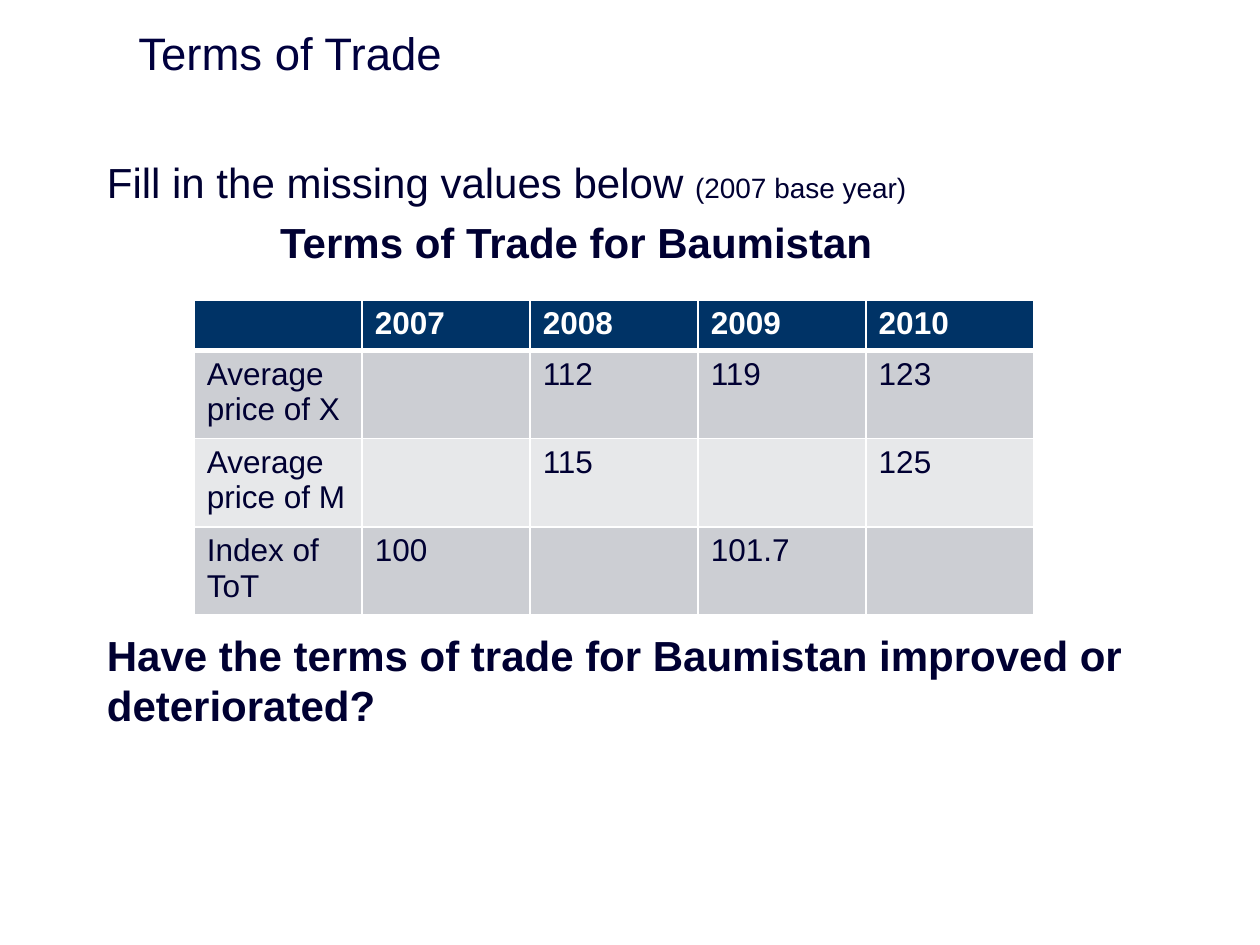
from lxml.etree import SubElement
from pptx import Presentation
from pptx.dml.color import RGBColor
from pptx.enum.text import MSO_ANCHOR
from pptx.oxml.ns import qn
from pptx.util import Pt

COLORS = {
    "title": "00003E",
    "text": "000032",
    "header": "003366",
    "odd_row": "CCCED3",
    "even_row": "E7E8EA",
    "white": "FFFFFF",
}
PRICES = [
    ["", "2007", "2008", "2009", "2010"],
    ["Average price of X", "", "112", "119", "123"],
    ["Average price of M", "", "115", "", "125"],
    ["Index of ToT", "100", "", "101.7", ""],
]


def add_text(paragraph, text, size=24, color="text", bold=False):
    run = paragraph.add_run()
    run.text = text
    font = run.font
    font.name = "Arial"
    font.size = Pt(size)
    font.bold = bold
    font.color.rgb = RGBColor.from_string(COLORS[color])


def add_frame(slide, left, top, width, height, anchor=MSO_ANCHOR.TOP):
    frame = slide.shapes.add_textbox(Pt(left), Pt(top), Pt(width), Pt(height)).text_frame
    frame.word_wrap = True
    frame.vertical_anchor = anchor
    return frame


def add_title(slide, left, top, width, height):
    frame = add_frame(slide, left, top, width, height, MSO_ANCHOR.MIDDLE)
    add_text(frame.paragraphs[0], "Terms of Trade", size=26, color="title")


def add_exercise(slide, left, top, width, height):
    """Instruction and table heading above the table, question below it."""
    frame = add_frame(slide, left, top, width, height)
    instruction = frame.paragraphs[0]
    add_text(instruction, "Fill in the missing values below ")
    add_text(instruction, "(2007 base year)", size=16)

    heading = frame.add_paragraph()
    heading.space_before = Pt(5.5)
    heading._p.get_or_add_pPr().set("marL", str(Pt(99)))
    add_text(heading, "Terms of Trade for Baumistan", bold=True)

    question = frame.add_paragraph()
    question.space_before = Pt(207)
    add_text(question, "Have the terms of trade for Baumistan improved or deteriorated?", bold=True)


def set_borders(cell, bottom):
    properties = cell._tc.get_or_add_tcPr()
    fill = properties[0]
    for side, weight in (("L", 1), ("R", 1), ("T", 1), ("B", bottom)):
        line = SubElement(properties, qn(f"a:ln{side}"), w=str(Pt(weight)))
        SubElement(SubElement(line, qn("a:solidFill")), qn("a:srgbClr"), val=COLORS["white"])
    properties.append(fill)  # the schema wants borders before the fill


def add_price_table(slide, left, top, width, header_height, row_height):
    height = header_height + row_height * (len(PRICES) - 1)
    table = slide.shapes.add_table(
        len(PRICES), len(PRICES[0]), Pt(left), Pt(top), Pt(width), Pt(height)
    ).table
    for column in table.columns:
        column.width = Pt(width / len(PRICES[0]))
    for r, values in enumerate(PRICES):
        is_header = r == 0
        table.rows[r].height = Pt(header_height if is_header else row_height)
        row_color = "header" if is_header else "odd_row" if r % 2 else "even_row"
        for c, value in enumerate(values):
            cell = table.cell(r, c)
            cell.fill.solid()
            cell.fill.fore_color.rgb = RGBColor.from_string(COLORS[row_color])
            set_borders(cell, bottom=3 if is_header else 1)
            if value:
                add_text(cell.text_frame.paragraphs[0], value, size=18,
                         color="white" if is_header else "text", bold=is_header)


def main():
    presentation = Presentation()
    presentation.slide_width, presentation.slide_height = Pt(720), Pt(540)
    slide = presentation.slides.add_slide(presentation.slide_layouts[6])
    add_title(slide, 72, 11.5, 648, 36.7)
    add_exercise(slide, 54, 86, 636, 353)
    add_price_table(slide, 111, 171.4, 480, header_height=27.2, row_height=47.4)
    presentation.save("out.pptx")


if __name__ == "__main__":
    main()
